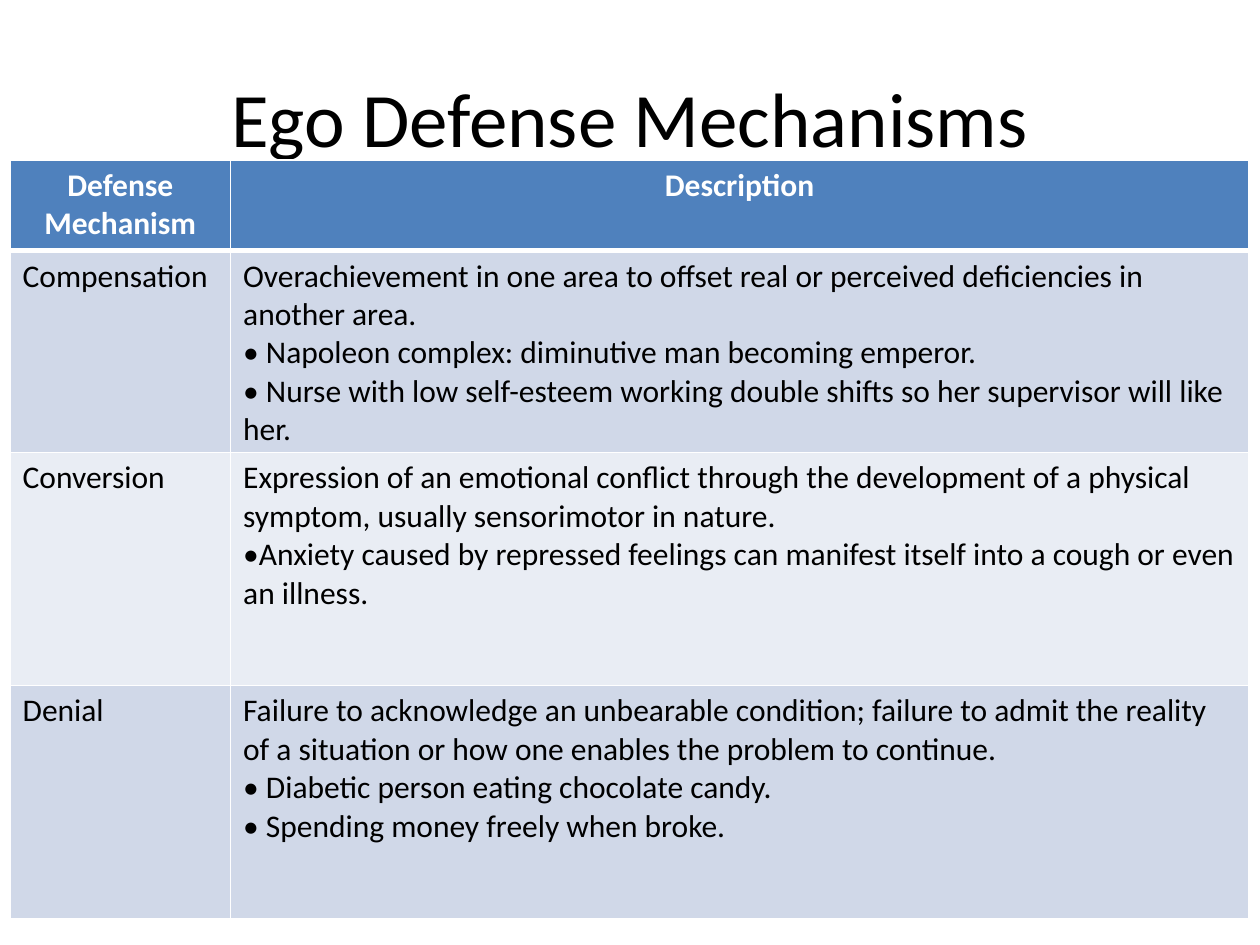
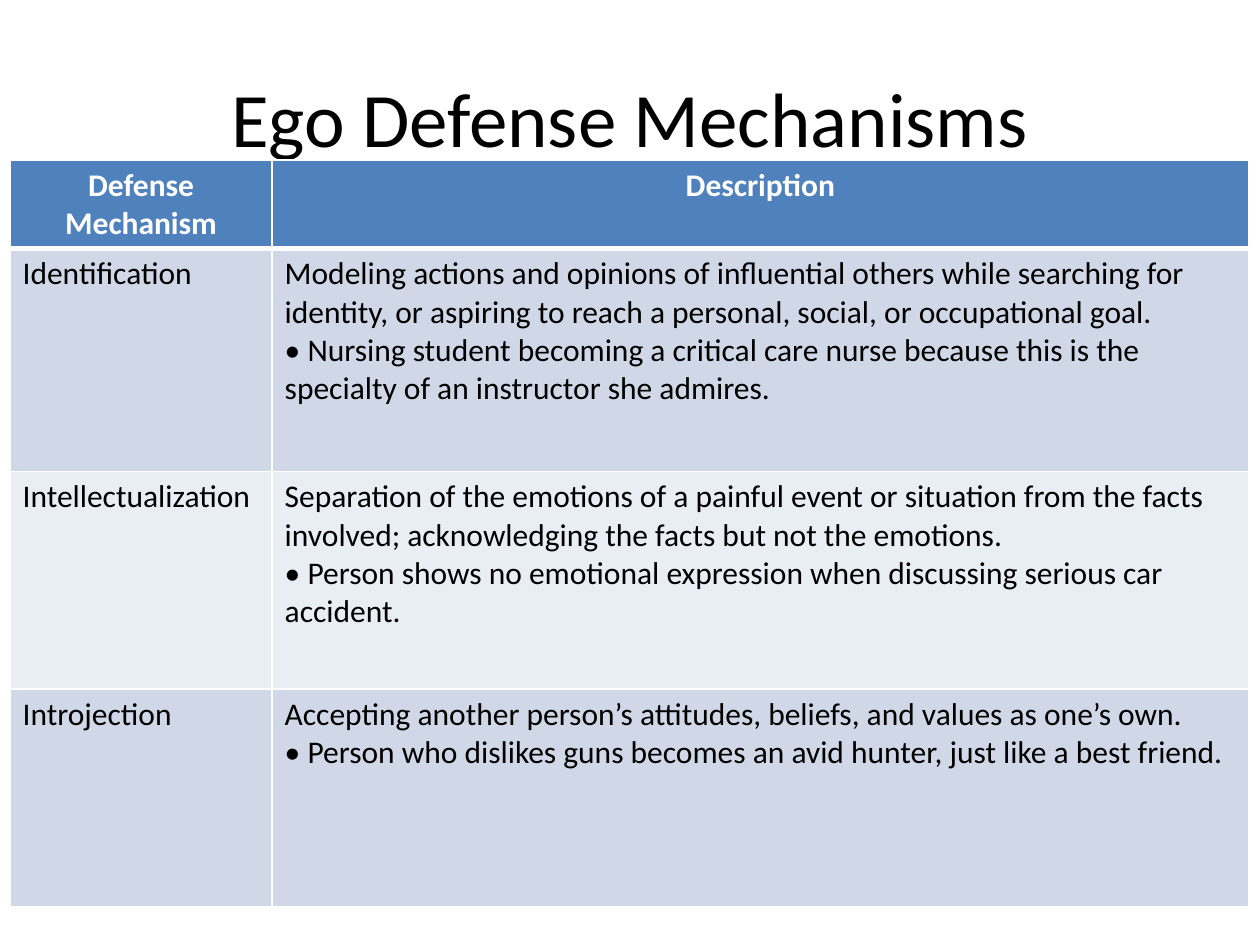
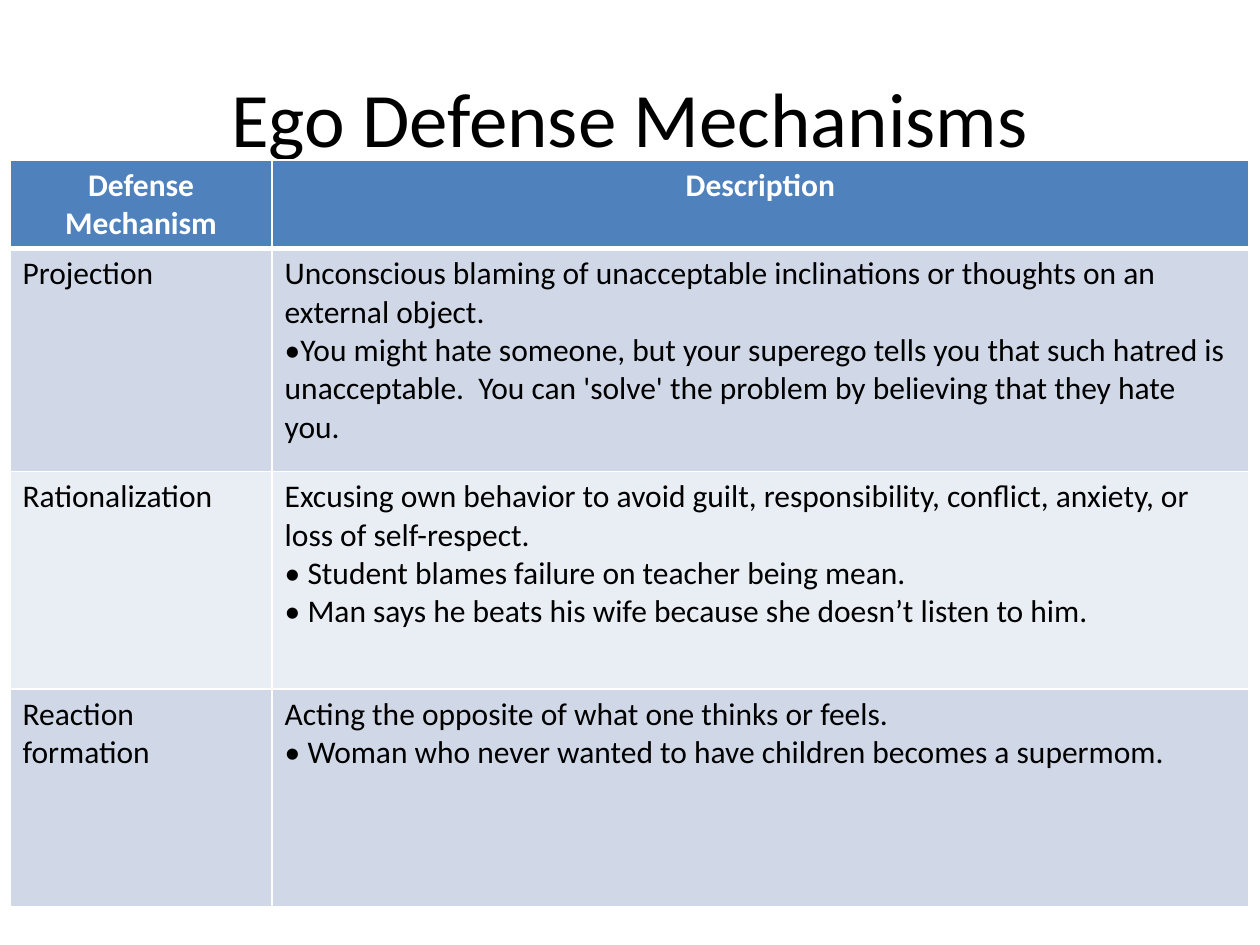
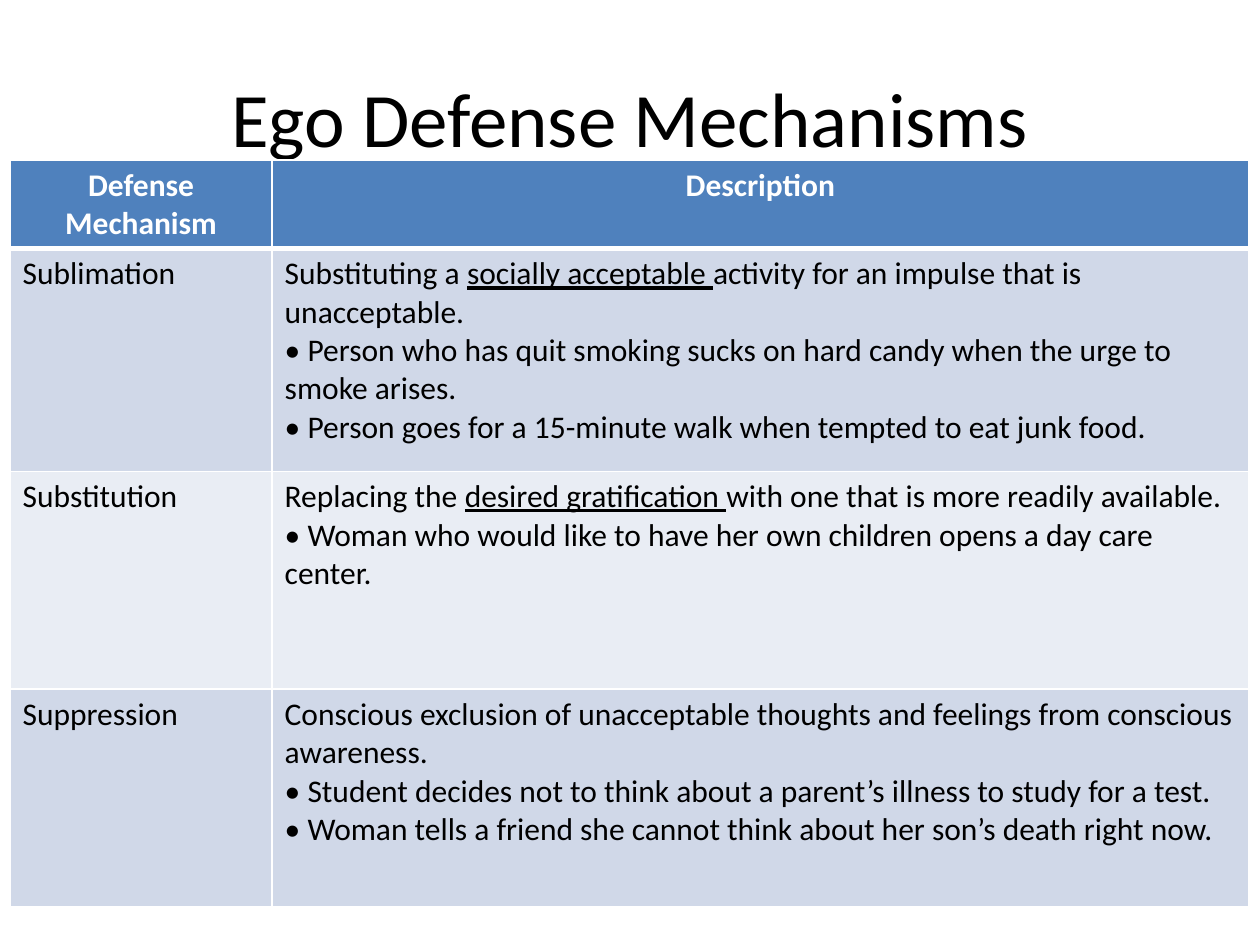
from dataclasses import dataclass

from lxml.etree import SubElement as Sub
from pptx import Presentation
from pptx.dml.color import RGBColor
from pptx.enum.text import MSO_ANCHOR as Anchor, PP_ALIGN as Align
from pptx.oxml.ns import qn
from pptx.slide import Slide
from pptx.table import _Cell as Cell
from pptx.text.text import TextFrame
from pptx.util import Pt

PX = 9144  # 100 px to the inch
FONT = "Calibri"
BLACK, WHITE, BLUE = "000000", "FFFFFF", "4F81BD"
BANDS = ("D0D8E8", "E9EDF4")
TITLE = "Ego Defense Mechanisms"
HEADS = ("Defense Mechanism", "Description")


@dataclass(frozen=True)
class Style:
    size: int
    color: str
    bold: bool = False
    align: Align = Align.LEFT


@dataclass(frozen=True)
class Grid:
    cols: tuple[int, ...]
    rows: tuple[int, ...]


@dataclass(frozen=True)
class Entry:
    name: str
    lines: tuple[str, ...]


@dataclass(frozen=True)
class Page:
    grid: Grid
    items: tuple[Entry, ...]


HERO = Style(44, BLACK, align=Align.CENTER)
HEAD = Style(18, WHITE, True, Align.CENTER)
BODY = Style(18, BLACK)

FIRST = Grid((175, 808), (72, 156, 185, 185))
LATER = Grid((208, 775), (67, 177, 173, 173))

# Words between underscores are underlined.
PAGES = (
    Page(FIRST, (
        Entry("Compensation", (
            "Overachievement in one area to offset real or perceived deficiencies in another area.",
            "• Napoleon complex: diminutive man becoming emperor.",
            "• Nurse with low self-esteem working double shifts so her supervisor will like her.",
        )),
        Entry("Conversion", (
            "Expression of an emotional conflict through the development of a physical symptom, "
            "usually sensorimotor in nature.",
            "•Anxiety caused by repressed feelings can manifest itself into a cough or even an illness.",
        )),
        Entry("Denial", (
            "Failure to acknowledge an unbearable condition; failure to admit the reality of a "
            "situation or how one enables the problem to continue.",
            "• Diabetic person eating chocolate candy.",
            "• Spending money freely when broke.",
        )),
    )),
    Page(LATER, (
        Entry("Identification", (
            "Modeling actions and opinions of influential others while searching for identity, "
            "or aspiring to reach a personal, social, or occupational goal.",
            "• Nursing student becoming a critical care nurse because this is the specialty of "
            "an instructor she admires.",
        )),
        Entry("Intellectualization", (
            "Separation of the emotions of a painful event or situation from the facts involved; "
            "acknowledging the facts but not the emotions.",
            "• Person shows no emotional expression when discussing serious car accident.",
        )),
        Entry("Introjection", (
            "Accepting another person’s attitudes, beliefs, and values as one’s own.",
            "• Person who dislikes guns becomes an avid hunter, just like a best friend.",
        )),
    )),
    Page(LATER, (
        Entry("Projection", (
            "Unconscious blaming of unacceptable inclinations or thoughts on an external object.",
            "•You might hate someone, but your superego tells you that such hatred is "
            "unacceptable.  You can 'solve' the problem by believing that they hate you.",
        )),
        Entry("Rationalization", (
            "Excusing own behavior to avoid guilt, responsibility, conflict, anxiety, or loss of "
            "self-respect.",
            "• Student blames failure on teacher being mean.",
            "• Man says he beats his wife because she doesn’t listen to him.",
        )),
        Entry("Reaction formation", (
            "Acting the opposite of what one thinks or feels.",
            "• Woman who never wanted to have children becomes a supermom.",
        )),
    )),
    Page(LATER, (
        Entry("Sublimation", (
            "Substituting a _socially acceptable _activity for an impulse that is unacceptable.",
            "• Person who has quit smoking sucks on hard candy when the urge to smoke arises.",
            "• Person goes for a 15-minute walk when tempted to eat junk food.",
        )),
        Entry("Substitution", (
            "Replacing the _desired gratification _with one that is more readily available.",
            "• Woman who would like to have her own children opens a day care center.",
        )),
        Entry("Suppression", (
            "Conscious exclusion of unacceptable thoughts and feelings from conscious awareness.",
            "• Student decides not to think about a parent’s illness to study for a test.",
            "• Woman tells a friend she cannot think about her son’s death right now.",
        )),
    )),
)


def px(*vals: int) -> tuple[int, ...]:
    return tuple(val * PX for val in vals)


def rgb(code: str) -> RGBColor:
    return RGBColor.from_string(code)


def write(frame: TextFrame, lines: tuple[str, ...], style: Style) -> None:
    frame.word_wrap = True
    for i, line in enumerate(lines):
        para = frame.add_paragraph() if i else frame.paragraphs[0]
        para.alignment = style.align
        for j, part in enumerate(line.split("_")):
            run = para.add_run()
            run.text = part
            font = run.font
            font.name, font.size, font.bold = FONT, Pt(style.size), style.bold
            font.color.rgb = rgb(style.color)
            if j % 2:
                font.underline = True


def edge(cell: Cell, top: int, base: int) -> None:
    """Give the cell white borders, with the top and bottom widths in points."""
    props = cell._tc.get_or_add_tcPr()
    for side, width in (("L", 1), ("R", 1), ("T", top), ("B", base)):
        line = Sub(props, qn(f"a:ln{side}"), w=str(Pt(width)))
        Sub(Sub(line, qn("a:solidFill")), qn("a:srgbClr"), val=WHITE)


def add_title(slide: Slide) -> None:
    frame = slide.shapes.add_textbox(*px(50, 30, 900, 125)).text_frame
    frame.vertical_anchor = Anchor.MIDDLE
    write(frame, (TITLE,), HERO)


def add_grid(slide: Slide, page: Page) -> None:
    cols, rows = page.grid.cols, page.grid.rows
    box = px(8, 127, sum(cols), sum(rows))
    table = slide.shapes.add_table(len(rows), len(cols), *box).table
    for col, width in zip(table.columns, px(*cols)):
        col.width = width
    for row, height in zip(table.rows, px(*rows)):
        row.height = height

    texts = [[(head,) for head in HEADS]]
    texts += [[(item.name,), item.lines] for item in page.items]
    for r, row in enumerate(texts):
        fill = BANDS[(r - 1) % 2] if r else BLUE
        for c, lines in enumerate(row):
            cell = table.cell(r, c)
            edge(cell, top=3 if r == 1 else 1, base=1 if r else 3)
            cell.fill.solid()
            cell.fill.fore_color.rgb = rgb(fill)
            write(cell.text_frame, lines, BODY if r else HEAD)


def main() -> None:
    deck = Presentation()
    deck.slide_width, deck.slide_height = px(1000, 750)
    for page in PAGES:
        slide = deck.slides.add_slide(deck.slide_layouts[6])
        add_title(slide)
        add_grid(slide, page)
    deck.save("out.pptx")


if __name__ == "__main__":
    main()
